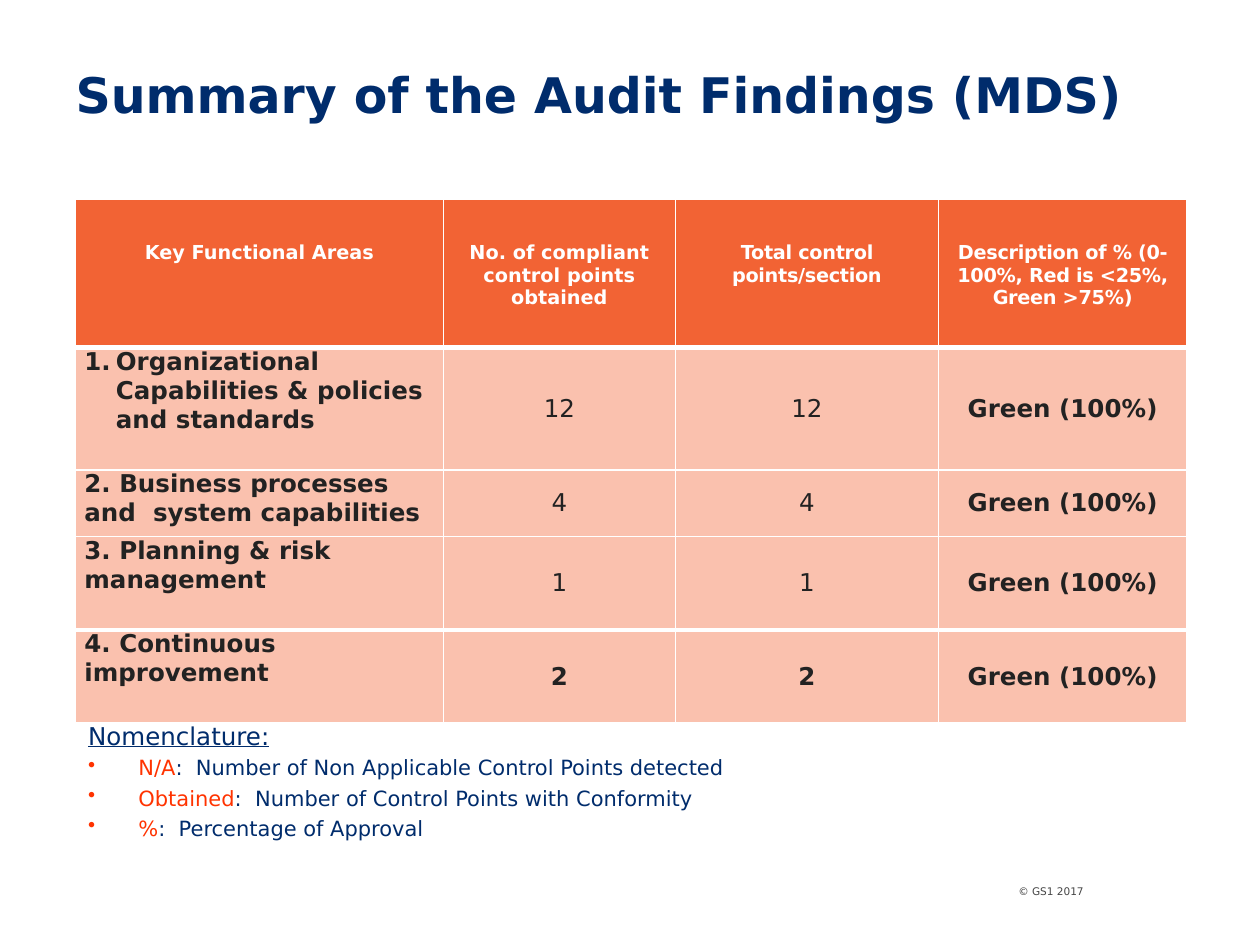
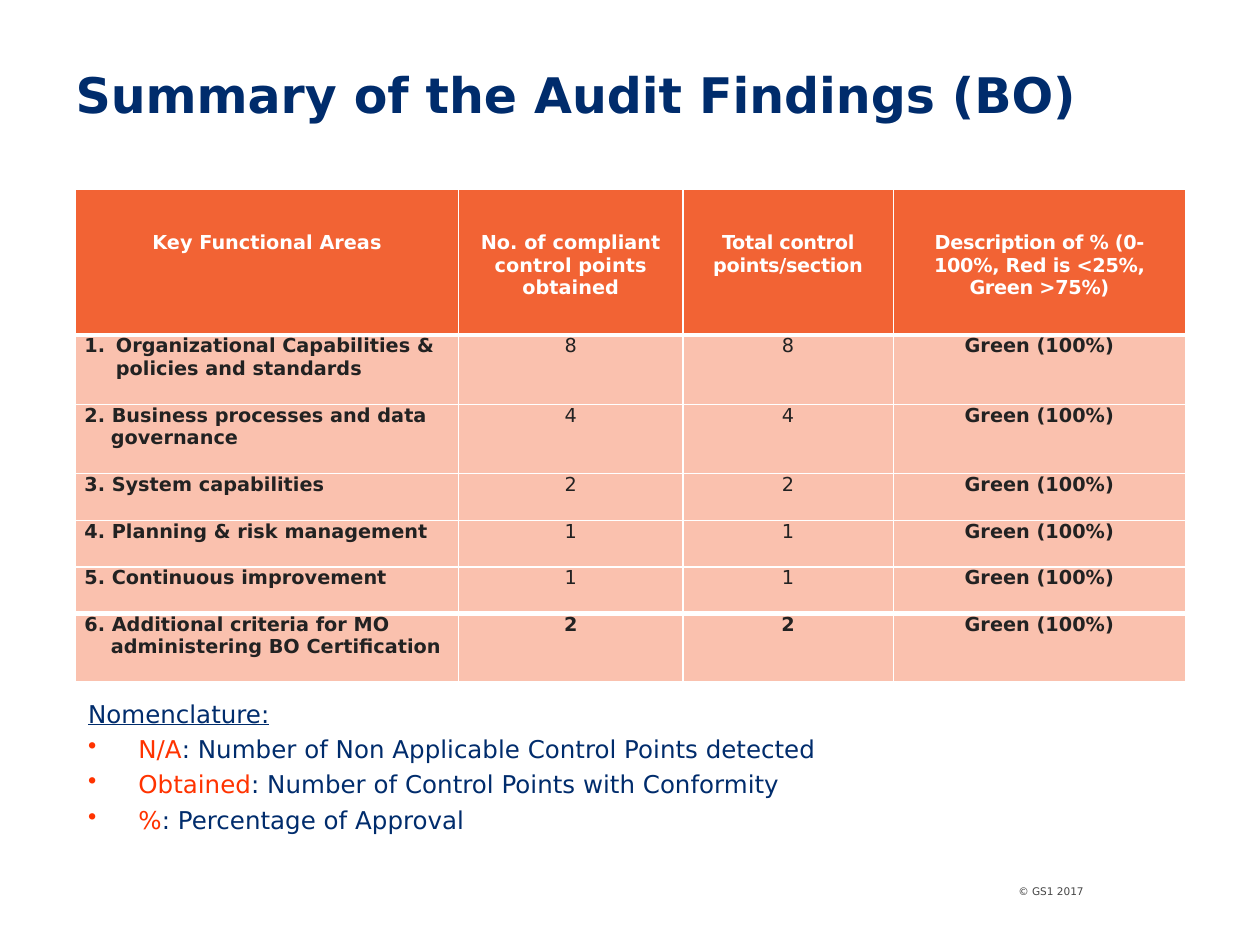
"""Builds two audit-findings slides, each with a results table and a nomenclature list."""
from lxml import etree
from pptx import Presentation
from pptx import util as u
from pptx.dml.color import RGBColor
from pptx.enum import text
from pptx.oxml.ns import qn

FONT = "DejaVu Sans"
NAVY, ORANGE, PEACH = "002C6C", "F26334", "FAC1AE"
RED, INK, GREY, WHITE = "FF3300", "222222", "454545", "FFFFFF"
LEFT = 0.6
CENTER, RIGHT = text.PP_ALIGN.CENTER, text.PP_ALIGN.RIGHT
TOP, MIDDLE = text.MSO_ANCHOR.TOP, text.MSO_ANCHOR.MIDDLE

HEADERS = [
    "Key Functional Areas",
    "No. of compliant control points obtained",
    "Total control points/section",
    "Description of % (0-100%, Red is <25%, Green >75%)",
]
TERMS = [
    ("N/A", "Number of Non Applicable Control Points detected"),
    ("Obtained", "Number of Control Points with Conformity"),
    ("%", "Percentage of Approval"),
]
RESULT = "Green (100%)"
SLIDES = [
    dict(
        title="Summary of the Audit Findings (MDS)",
        areas=[
            ("Organizational Capabilities & policies and standards", 12),
            ("2. Business processes and  system capabilities", 4),
            ("3. Planning & risk management", 1),
            ("4. Continuous improvement", 2),
        ],
        top=1.58, cols=[2.92, 1.84, 2.09, 1.97], rows=[1.18, 0.97, 0.53, 0.74, 0.74],
        size=14, anchor=MIDDLE, hang=0,
        terms_box=(LEFT, 5.67, 7.88, 1.35), term_size=12, colon=":  ",
    ),
    dict(
        title="Summary of the Audit Findings (BO)",
        areas=[
            ("Organizational Capabilities & policies and standards", 8),
            ("2. Business processes and data governance", 4),
            ("3. System capabilities", 2),
            ("4. Planning & risk management", 1),
            ("5. Continuous improvement", 1),
            ("6. Additional criteria for MO administering BO Certification", 2),
        ],
        top=1.5, cols=[3.04, 1.78, 1.67, 2.32],
        rows=[1.16, 0.55, 0.55, 0.37, 0.37, 0.37, 0.54],
        size=11, anchor=TOP, hang=0.21,
        terms_box=(LEFT, 5.5, 7.88, 1.47), term_size=14, colon=": ",
    ),
]


def rgb(value):
    return RGBColor.from_string(value)


def add_run(p, words, size, color, **formats):
    r = p.add_run()
    r.text = words
    r.font.color.rgb = rgb(color)
    for name, value in dict(name=FONT, size=u.Pt(size), **formats).items():
        setattr(r.font, name, value)
    return r


def indent(p, width, bullet=None, value=None):
    pPr = p._p.get_or_add_pPr()
    pPr.set("marL", str(u.Inches(width)))
    pPr.set("indent", str(-u.Inches(width)))
    if bullet:
        attr = "char" if bullet == "buChar" else "type"
        etree.SubElement(pPr, qn("a:" + bullet)).set(attr, value)


def set_margins(box, left, top, right, bottom):
    for side, value in dict(left=left, top=top, right=right, bottom=bottom).items():
        setattr(box, "margin_" + side, u.Inches(value))


def add_box(s, at, margins=(0.1, 0.05, 0.1, 0.05), anchor=TOP):
    tf = s.shapes.add_textbox(*map(u.Inches, at)).text_frame
    tf.word_wrap = True
    tf.vertical_anchor = anchor
    set_margins(tf, *margins)
    return tf


def add_borders(cell, **widths):
    tcPr = cell._tc.get_or_add_tcPr()
    for side in "LRTB":
        ln = etree.SubElement(tcPr, qn("a:ln" + side), w=str(u.Pt(widths.get(side, 1))))
        fill = etree.SubElement(ln, qn("a:solidFill"))
        etree.SubElement(fill, qn("a:srgbClr"), val=WHITE)


def fill_cell(cell, row, col, value, spec, last):
    head = row == 0
    add_borders(cell, T=3 if row in (1, last) else 1, B=3 if row in (0, last - 1) else 1)
    cell.fill.solid()
    cell.fill.fore_color.rgb = rgb(ORANGE if head else PEACH)
    set_margins(cell, 0.07, 0.34 if head else 0, 0.07, 0)
    cell.vertical_anchor = TOP if head or col == 0 else spec["anchor"]
    p = cell.text_frame.paragraphs[0]
    if head or col:
        p.alignment = CENTER
    elif row == 1:
        indent(p, 0.25, "buAutoNum", "arabicPeriod")
    elif spec["hang"]:
        indent(p, spec["hang"])
    bold = head or col in (0, 3) or row == last
    r = add_run(p, str(value), 11 if head else spec["size"], WHITE if head else INK, bold=bold)
    if head and col > 1:
        r.font._element.set("spc", "-20")


def add_findings(s, spec):
    grid = [HEADERS] + [(area, n, n, RESULT) for area, n in spec["areas"]]
    at = LEFT, spec["top"], sum(spec["cols"]), sum(spec["rows"])
    table = s.shapes.add_table(len(grid), len(HEADERS), *map(u.Inches, at)).table
    table.horz_banding = False
    for column, width in zip(table.columns, spec["cols"]):
        column.width = u.Inches(width)
    for row, values in enumerate(grid):
        table.rows[row].height = u.Inches(spec["rows"][row])
        for col, value in enumerate(values):
            fill_cell(table.cell(row, col), row, col, value, spec, len(grid) - 1)


def add_nomenclature(s, spec):
    tf = add_box(s, spec["terms_box"])
    size = spec["term_size"]
    add_run(tf.paragraphs[0], "Nomenclature:", 14, NAVY, underline=True)
    for term, meaning in TERMS:
        p = tf.add_paragraph()
        p.space_before = u.Pt(round(size * 0.235, 1))
        indent(p, 0.4, "buChar", "•")
        add_run(p, term, size, RED)
        add_run(p, spec["colon"] + meaning, size, NAVY)


def add_frame(s, title):
    p = add_box(s, (6.08, 7.02, 2.52, 0.15), (0, 0, 0, 0)).paragraphs[0]
    p.alignment = RIGHT
    add_run(p, "© GS1 2017", 6, GREY)
    tf = add_box(s, (LEFT, 0.25, 8.81, 0.99), (0, 0.05, 0.1, 0.05), MIDDLE)
    add_run(tf.paragraphs[0], title, 28, NAVY, bold=True)


def main():
    prs = Presentation()
    prs.slide_width, prs.slide_height = u.Inches(10), u.Inches(7.5)
    for spec in SLIDES:
        s = prs.slides.add_slide(prs.slide_layouts[6])
        add_frame(s, spec["title"])
        add_nomenclature(s, spec)
        add_findings(s, spec)
    prs.save("out.pptx")


if __name__ == "__main__":
    main()
